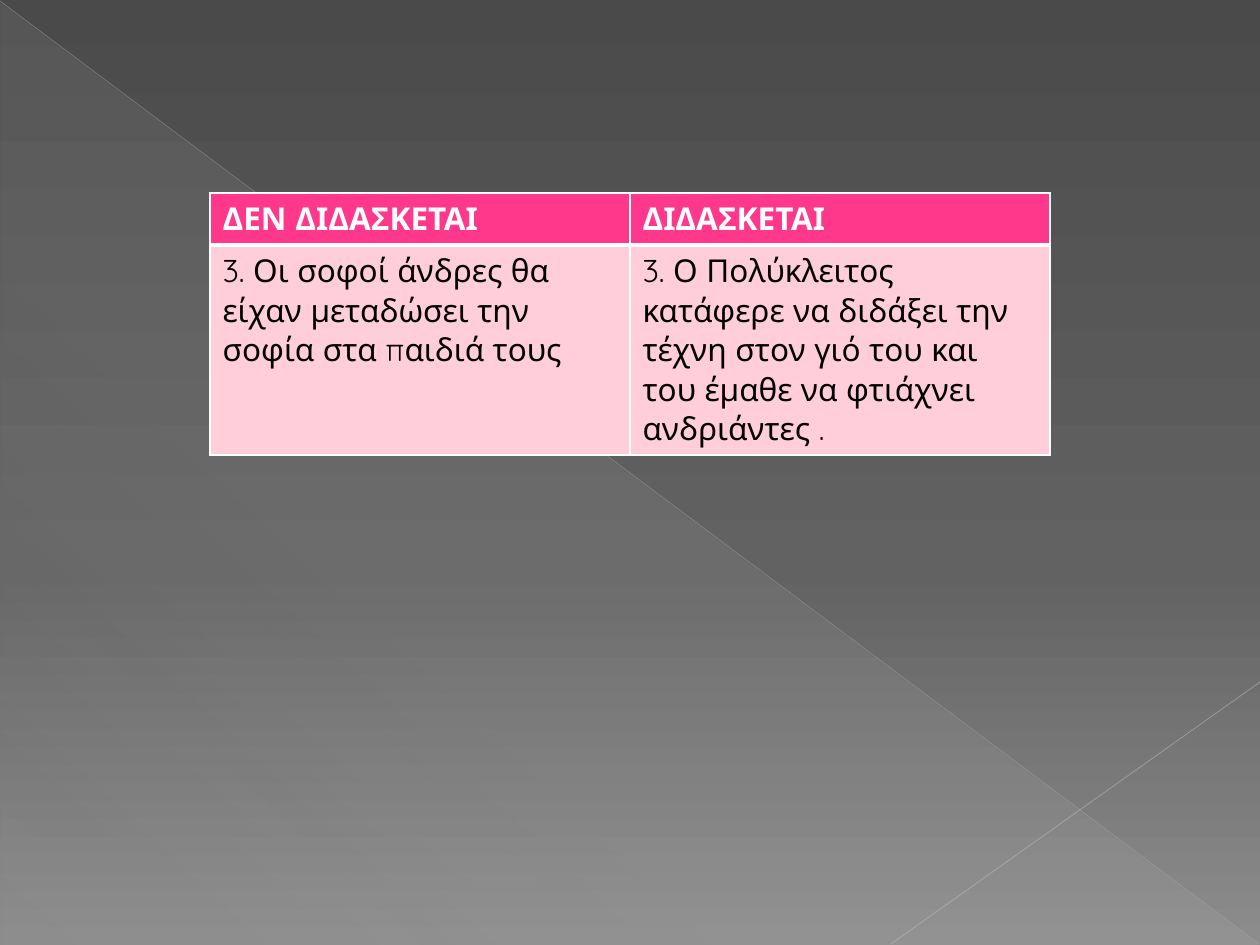
from lxml.etree import SubElement as Sub
from pptx import Presentation
from pptx.dml.color import RGBColor
from pptx.enum.shapes import MSO_CONNECTOR as Conn, MSO_SHAPE as Shape
from pptx.oxml.ns import qn
from pptx.util import Emu, Pt

SCALE = 914400 / 126
FONT = "Quicksand"
WHITE = "FFFFFF"
ROWS = [
    ("ΔΕΝ ΔΙΔΑΣΚΕΤΑΙ", "ΔΙΔΑΣΚΕΤΑΙ"),
    ("3. Οι σοφοί άνδρες θα είχαν μεταδώσει την σοφία στα παιδιά τους",
     "3. Ο Πολύκλειτος κατάφερε να διδάξει την τέχνη στον γιό του "
     "και του έμαθε να φτιάχνει ανδριάντες ."),
]
HEIGHTS = (51, 202)
# fill, text colour, bold, width of the bottom border
STYLES = [("FF388C", WHITE, True, 3), ("FFCEDA", "000000", False, 1)]


def px(n):
    return Emu(round(n * SCALE))


def rgb(text):
    return RGBColor.from_string(text)


def add_rgb(parent, color, alpha=100):
    node = Sub(parent, qn("a:srgbClr"), val=color)
    if alpha < 100:
        Sub(node, qn("a:alpha"), val=str(alpha * 1000))


def blend(fill, root, stops, angle):
    """Fill with a linear gradient of (position, colour, alpha) stops."""
    fill.gradient()
    grad = next(root.iter(qn("a:gradFill")))
    for child in list(grad):
        grad.remove(child)
    group = Sub(grad, qn("a:gsLst"))
    for pos, color, alpha in stops:
        add_rgb(Sub(group, qn("a:gs"), pos=str(pos * 1000)), color, alpha)
    Sub(grad, qn("a:lin"), ang=str(angle * 60000), scaled="0")


def add_line(slide, start, end, color, width, alpha):
    line = slide.shapes.add_connector(
        Conn.STRAIGHT, *map(px, start), *map(px, end))
    line.line.width = Pt(width)
    line.line.color.rgb = rgb(color)
    node = next(line.element.iter(qn("a:srgbClr")))
    Sub(node, qn("a:alpha"), val=str(alpha * 1000))
    Sub(line.element.spPr, qn("a:effectLst"))


def add_wedge(slide):
    wedge = slide.shapes.add_shape(
        Shape.RIGHT_TRIANGLE, px(1), px(2), px(1258), px(943))
    wedge.shadow.inherit = False
    wedge.line.fill.background()
    stops = [(0, "D2D2D2", 10), (70, "D2D2D2", 8), (100, "D2D2D2", 1)]
    blend(wedge.fill, wedge.element, stops, 133)


def set_edges(cell, top, bottom):
    props = cell.fill and cell._tc.get_or_add_tcPr()
    for i, (side, width) in enumerate(
            zip(("lnL", "lnR", "lnT", "lnB"), (1, 1, top, bottom))):
        edge = Sub(props, qn("a:" + side), w=str(Pt(width)))
        add_rgb(Sub(edge, qn("a:solidFill")), WHITE)
        props.insert(i, edge)


def style_cell(cell, text, style, top):
    fill, color, bold, bottom = style
    cell.text = text
    cell.fill.solid()
    cell.fill.fore_color.rgb = rgb(fill)
    set_edges(cell, top, bottom)
    font = cell.text_frame.paragraphs[0].font
    font.name, font.size, font.bold = FONT, Pt(18), bold
    font.color.rgb = rgb(color)


def add_grid(slide):
    grid = slide.shapes.add_table(
        len(ROWS), 2, px(210), px(193), px(840), px(sum(HEIGHTS))).table
    top = 1
    for r, (texts, style) in enumerate(zip(ROWS, STYLES)):
        grid.rows[r].height = px(HEIGHTS[r])
        for c, text in enumerate(texts):
            style_cell(grid.cell(r, c), text, style, top)
        top = style[-1]


def main():
    deck = Presentation()
    deck.slide_width, deck.slide_height = px(1260), px(945)
    slide = deck.slides.add_slide(deck.slide_layouts[6])

    # Backdrop
    stops = [(0, "4A4A4A", 100), (60, "626262", 100), (100, "8C8C8C", 100)]
    blend(slide.background.fill, slide.element, stops, 90)
    add_wedge(slide)
    add_line(slide, (0, 1), (1259, 944), "BFBFBF", 0.39, 35)
    add_line(slide, (1260, 682), (891, 944), "C6C6C6", 0.47, 45)

    # Comparison table
    add_grid(slide)
    deck.save("out.pptx")


if __name__ == "__main__":
    main()
